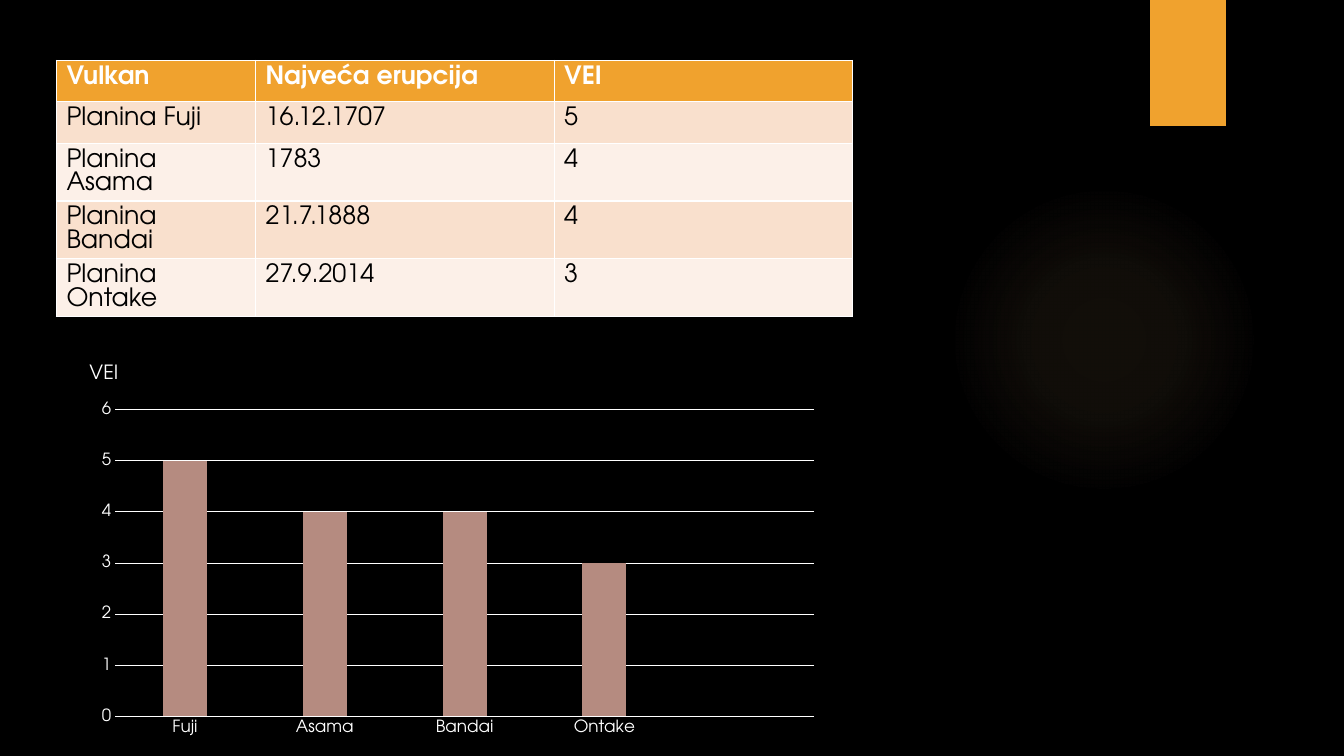
from dataclasses import dataclass

from lxml import etree
from pptx import Presentation
from pptx.chart.data import CategoryChartData
from pptx.dml.color import RGBColor
from pptx.enum.chart import XL_CHART_TYPE, XL_TICK_MARK
from pptx.enum.shapes import MSO_SHAPE
from pptx.oxml import parse_xml
from pptx.oxml.ns import nsdecls, qn
from pptx.util import Inches, Pt

COLUMN_CLUSTERED = XL_CHART_TYPE.COLUMN_CLUSTERED
NO_TICKS = XL_TICK_MARK.NONE
ELLIPSE, RECTANGLE = MSO_SHAPE.OVAL, MSO_SHAPE.RECTANGLE

SLIDE_WIDTH, SLIDE_HEIGHT = Inches(13.33), Inches(7.5)
FONT = "TeX Gyre Adventor"
BLACK, WHITE, ORANGE, GLOW, BAR = "000000", "FFFFFF", "F0A22E", "F6C782", "B58B80"
BANDS = ("F9E0CD", "FCF0E8")


@dataclass
class Box:
    """Place and size in percent of the slide."""
    left: float
    top: float
    width: float
    height: float

    def lengths(self) -> tuple:
        return (across(self.left), down(self.top), across(self.width), down(self.height))


@dataclass
class Volcano:
    name: str
    eruption: str
    vei: int


GLOW_BOX = Box(70.58, 24.4, 23.1, 41.07)
TAB_BOX = Box(85.58, 0, 5.63, 16.67)
TABLE_BOX = Box(4.2, 8, 59.25, 33.6)
CHART_BOX = Box(6.38, 46.93, 54.75, 52)
COLUMN_PARTS = (2, 3, 3)
SINGLE_ROW, DOUBLE_ROW = 5.47, 7.6

HEADINGS = ("Vulkan", "Najveća erupcija", "VEI")
VOLCANOES = (
    Volcano("Fuji", "16.12.1707", 5),
    Volcano("Asama", "1783", 4),
    Volcano("Bandai", "21.7.1888", 4),
    Volcano("Ontake", "27.9.2014", 3),
)


def across(percent: float) -> int:
    return int(SLIDE_WIDTH * percent / 100)


def down(percent: float) -> int:
    return int(SLIDE_HEIGHT * percent / 100)


def color(value: str) -> RGBColor:
    return RGBColor.from_string(value)


def paint(fill, value: str) -> None:
    fill.solid()
    fill.fore_color.rgb = color(value)


def style_font(font, size: float, value: str, bold: bool = False) -> None:
    font.name, font.size, font.bold = FONT, Pt(size), bold
    font.color.rgb = color(value)


def add_plain_shape(slide, kind, box: Box, value: str):
    shape = slide.shapes.add_shape(kind, *box.lengths())
    shape.shadow.inherit = False
    paint(shape.fill, value)
    shape.line.fill.background()
    return shape


def add_glow(slide) -> None:
    shape = add_plain_shape(slide, ELLIPSE, GLOW_BOX, GLOW)
    stops = "".join(
        f'<a:gs pos="{position * 1000}"><a:srgbClr val="{GLOW}">'
        f'<a:alpha val="{alpha * 1000}"/></a:srgbClr></a:gs>'
        for position, alpha in ((0, 7), (36, 6), (69, 0), (100, 0))
    )
    gradient = parse_xml(
        f'<a:gradFill {nsdecls("a")}><a:gsLst>{stops}</a:gsLst><a:path path="circle">'
        '<a:fillToRect l="50000" t="50000" r="50000" b="50000"/></a:path></a:gradFill>'
    )
    properties = shape.element.spPr
    properties.replace(properties.find(qn("a:solidFill")), gradient)


def fill_cell(cell, text: str, background: str, text_color: str, bold: bool) -> None:
    paint(cell.fill, background)
    paragraph = cell.text_frame.paragraphs[0]
    paragraph.line_spacing = Pt(17)
    run = paragraph.add_run()
    run.text = text
    style_font(run.font, 18, text_color, bold)


def add_volcano_table(slide) -> None:
    rows = [HEADINGS]
    rows += [(f"Planina {v.name}", v.eruption, str(v.vei)) for v in VOLCANOES]
    frame = slide.shapes.add_table(len(rows), len(HEADINGS), *TABLE_BOX.lengths())
    table = frame.table
    for column, part in zip(table.columns, COLUMN_PARTS):
        column.width = across(TABLE_BOX.width * part / sum(COLUMN_PARTS))
    for index, texts in enumerate(rows):
        header = index == 0
        table.rows[index].height = down(SINGLE_ROW if index < 2 else DOUBLE_ROW)
        background = ORANGE if header else BANDS[(index - 1) % 2]
        for cell, text in zip(table.rows[index].cells, texts):
            fill_cell(cell, text, background, WHITE if header else BLACK, header)


def set_layout(parent, before: str, target: str, values: dict) -> None:
    """Place a chart part by shares of the chart's size."""
    for old in parent.findall(qn("c:layout")):
        parent.remove(old)
    layout = etree.Element(qn("c:layout"))
    manual = etree.SubElement(layout, qn("c:manualLayout"))
    if target:
        etree.SubElement(manual, qn("c:layoutTarget"), val=target)
    for axis in ("x", "y"):
        etree.SubElement(manual, qn(f"c:{axis}Mode"), val="edge")
    for key, value in values.items():
        etree.SubElement(manual, qn(f"c:{key}"), val=str(value))
    if before:
        parent.find(qn(before)).addnext(layout)
    else:
        parent.insert(0, layout)


def add_vei_chart(slide) -> None:
    # The last category is an empty slot
    data = CategoryChartData()
    data.categories = [v.name for v in VOLCANOES] + [""]
    data.add_series("Series 1", [v.vei for v in VOLCANOES] + [None])
    chart = slide.shapes.add_chart(COLUMN_CLUSTERED, *CHART_BOX.lengths(), data).chart
    chart.has_legend = chart.has_title = False
    style_font(chart.font, 10, WHITE)

    # Bars
    plot = chart.plots[0]
    plot.gap_width, plot.overlap, plot.vary_by_categories = 219, -27, False
    paint(plot.series[0].format.fill, BAR)

    # Axes
    category_axis, value_axis = chart.category_axis, chart.value_axis
    for axis in (category_axis, value_axis):
        axis.major_tick_mark = axis.minor_tick_mark = NO_TICKS
        style_font(axis.tick_labels.font, 12, WHITE)
    value_axis.minimum_scale, value_axis.maximum_scale, value_axis.major_unit = 0, 6, 1
    value_axis.has_major_gridlines = True
    value_axis.format.line.fill.background()
    for line in (category_axis.format.line, value_axis.major_gridlines.format.line):
        paint(line.fill, WHITE)
        line.width = Pt(0.75)

    # Axis title above the value labels
    title = category_axis.axis_title
    run = title.text_frame.paragraphs[0].add_run()
    run.text = "VEI"
    style_font(run.font, 14, WHITE)
    set_layout(title._element, "c:tx", "", {"x": 0, "y": 0.01})
    set_layout(chart._chartSpace.chart.plotArea, "", "inner",
               {"x": 0.04, "y": 0.14, "w": 0.95, "h": 0.78})


def main() -> None:
    presentation = Presentation()
    presentation.slide_width, presentation.slide_height = SLIDE_WIDTH, SLIDE_HEIGHT
    slide = presentation.slides.add_slide(presentation.slide_layouts[6])
    paint(slide.background.fill, BLACK)
    add_glow(slide)
    add_plain_shape(slide, RECTANGLE, TAB_BOX, ORANGE)
    add_volcano_table(slide)
    add_vei_chart(slide)
    presentation.save("out.pptx")


if __name__ == "__main__":
    main()
